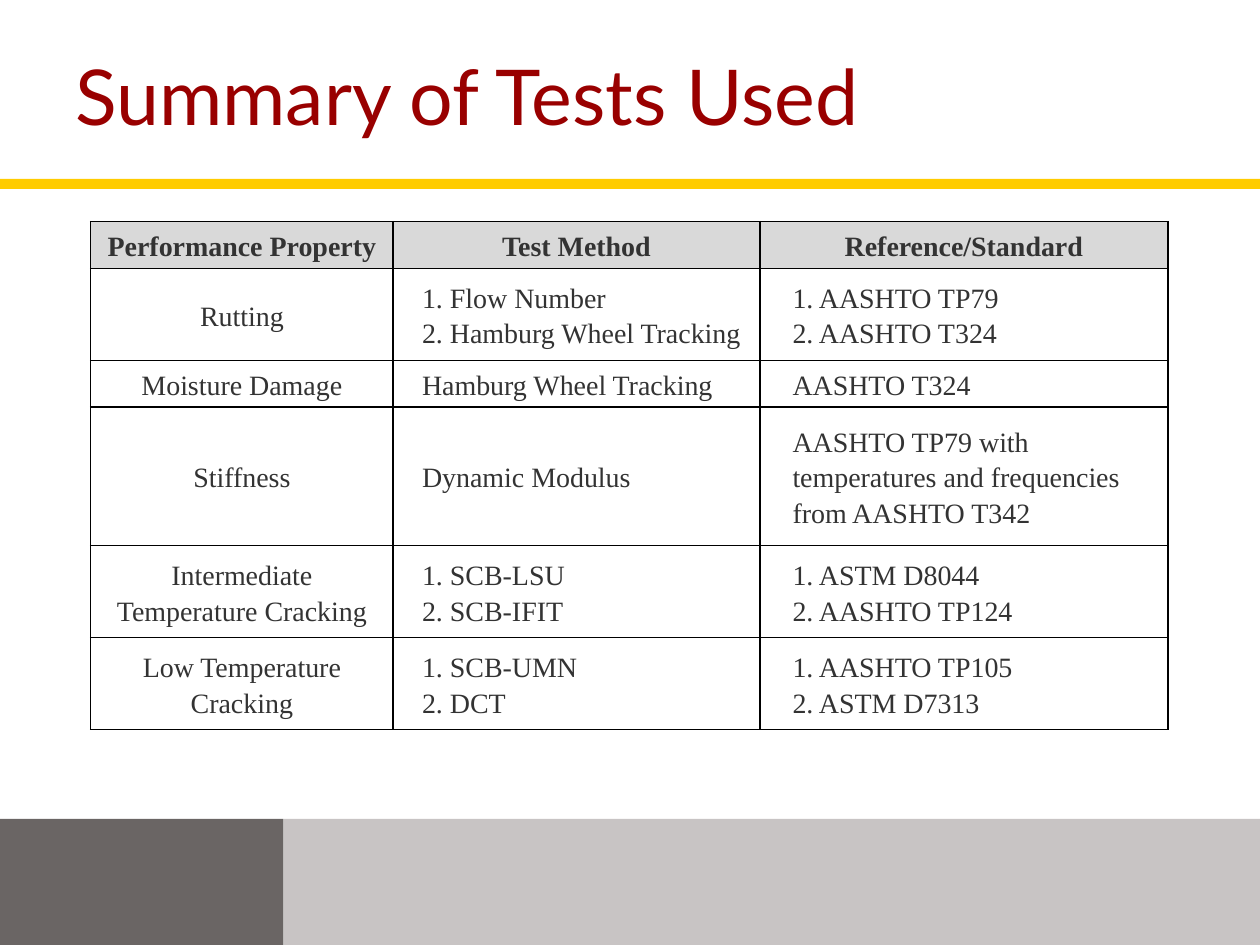
from lxml.etree import SubElement
from pptx import Presentation
from pptx.dml.color import RGBColor
from pptx.enum.shapes import MSO_SHAPE as SHAPE
from pptx.enum.text import MSO_ANCHOR as ANCHOR, PP_ALIGN as ALIGN
from pptx.oxml.ns import qn
from pptx.util import Inches, Pt

COLORS = {
    "title": "990000", "rule": "FFCC00", "dark": "6A6564", "light": "C8C4C4",
    "header": "D9D9D9", "text": "333333", "border": "000000",
}
COLUMNS = [2.4, 2.91, 3.24]
ROWS = [0.37, 0.73, 0.37, 1.1, 0.73, 0.73]
INDENTS = [0, 0.16, 0.19]
TESTS = [
    ["Performance Property", "Test Method", "Reference/Standard"],
    ["Rutting", "1. Flow Number\n2. Hamburg Wheel Tracking",
     "1. AASHTO TP79\n2. AASHTO T324"],
    ["Moisture Damage", "Hamburg Wheel Tracking", "AASHTO T324"],
    ["Stiffness", "Dynamic Modulus",
     "AASHTO TP79 with temperatures and frequencies from AASHTO T342"],
    ["Intermediate Temperature Cracking", "1. SCB-LSU\n2. SCB-IFIT",
     "1. ASTM D8044\n2. AASHTO TP124"],
    ["Low Temperature Cracking", "1. SCB-UMN\n2. DCT",
     "1. AASHTO TP105\n2. ASTM D7313"],
]


class SlideBuilder:
    """Draws styled elements on the current slide."""

    def __init__(self, slide):
        self.slide = slide
        self.title_font = "Lato"
        self.body_font = "Times New Roman"

    def color(self, name):
        return RGBColor.from_string(COLORS[name])

    def style(self, p, font, size, color, bold=False):
        p.font.name = font
        p.font.size = Pt(size)
        p.font.bold = bold
        p.font.color.rgb = self.color(color)

    def band(self, x, y, w, h, color):
        s = self.slide.shapes.add_shape(
            SHAPE.RECTANGLE, Inches(x), Inches(y), Inches(w), Inches(h))
        s.shadow.inherit = False
        s.fill.solid()
        s.fill.fore_color.rgb = self.color(color)
        s.line.fill.background()

    def title(self, x, y, w, h, text):
        s = self.slide.shapes.add_textbox(
            Inches(x), Inches(y), Inches(w), Inches(h))
        tf = s.text_frame
        tf.word_wrap = True
        tf.vertical_anchor = ANCHOR.MIDDLE
        p = tf.paragraphs[0]
        p.text = text
        p.line_spacing = 0.9
        self.style(p, self.title_font, 44, "title")

    def borders(self, cell):
        pr = cell._tc.get_or_add_tcPr()
        for side in ("a:lnL", "a:lnR", "a:lnT", "a:lnB"):
            ln = SubElement(pr, qn(side), w=str(Pt(1)))
            fill = SubElement(ln, qn("a:solidFill"))
            SubElement(fill, qn("a:srgbClr"), val=COLORS["border"])

    def cell(self, cell, text, header, indent):
        cell.vertical_anchor = ANCHOR.MIDDLE
        cell.margin_left = cell.margin_right = Inches(0.07)
        cell.margin_top = cell.margin_bottom = 0
        self.borders(cell)
        if header:
            cell.fill.solid()
            cell.fill.fore_color.rgb = self.color("header")
        else:
            cell.fill.background()
        tf = cell.text_frame
        tf.text = text
        for p in tf.paragraphs:
            p.line_spacing = 1.15
            if header or not indent:
                p.alignment = ALIGN.CENTER
            else:
                p.alignment = ALIGN.LEFT
                p._p.get_or_add_pPr().set("marL", str(Inches(indent)))
            self.style(p, self.body_font, 16, "text", header)

    def table(self, x, y, widths, heights, rows):
        table = self.slide.shapes.add_table(
            len(heights), len(widths), Inches(x), Inches(y),
            Inches(sum(widths)), Inches(sum(heights))).table
        for column, width in zip(table.columns, widths):
            column.width = Inches(width)
        for i, (height, row) in enumerate(zip(heights, rows)):
            table.rows[i].height = Inches(height)
            for j, text in enumerate(row):
                self.cell(table.cell(i, j), text, i == 0, INDENTS[j])


def main():
    prs = Presentation()
    prs.slide_width, prs.slide_height = Inches(10), Inches(7.5)
    builder = SlideBuilder(prs.slides.add_slide(prs.slide_layouts[6]))
    builder.band(2.25, 6.5, 7.75, 1, "light")
    builder.band(0, 6.5, 2.25, 1, "dark")
    builder.band(0, 1.42, 10, 0.08, "rule")
    builder.title(0.5, 0.32, 9, 0.95, "Summary of Tests Used")
    builder.table(0.72, 1.76, COLUMNS, ROWS, TESTS)
    prs.save("out.pptx")


if __name__ == "__main__":
    main()
